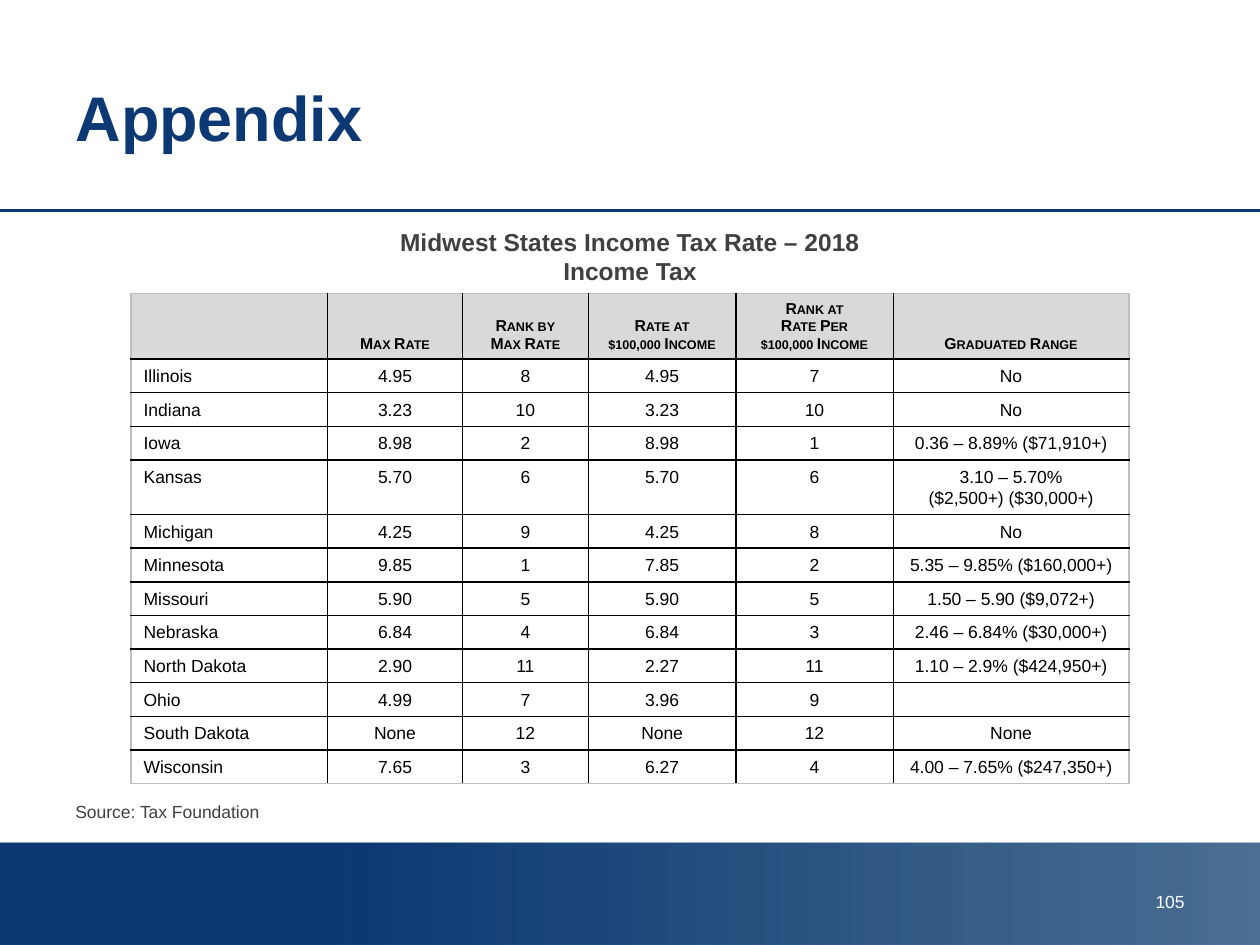
import pptx
import pptx.util
import pptx.dml.color
import pptx.enum.shapes
import pptx.enum.text
import pptx.oxml.ns
import lxml.etree

Inches, Pt = pptx.util.Inches, pptx.util.Pt
RGBColor = pptx.dml.color.RGBColor
Align = pptx.enum.text.PP_ALIGN
Anchor = pptx.enum.text.MSO_ANCHOR
qn = pptx.oxml.ns.qn

NAVY = RGBColor(0x0C, 0x38, 0x73)
TEAL = RGBColor(0x00, 0x33, 0x66)
DARK = RGBColor(0x40, 0x40, 0x40)
GREY = RGBColor(0xD9, 0xD9, 0xD9)
EDGE = RGBColor(0xBF, 0xBF, 0xBF)
BLACK = RGBColor(0, 0, 0)
WHITE = RGBColor(0xFF, 0xFF, 0xFF)

TITLE = "Appendix"
HEADING = "Midwest States Income Tax Rate – 2018\vIncome Tax"
SOURCE = "Source: Tax Foundation"
NUMBER = "105"
ROWS = [
    ("", "Max Rate", "Rank by\vMax Rate", "Rate at\v$100,000 Income",
     "Rank at\vRate Per\v$100,000 Income", "Graduated Range"),
    ("Illinois", "4.95", "8", "4.95", "7", "No"),
    ("Indiana", "3.23", "10", "3.23", "10", "No"),
    ("Iowa", "8.98", "2", "8.98", "1", "0.36 – 8.89% ($71,910+)"),
    ("Kansas", "5.70", "6", "5.70", "6", "3.10 – 5.70%\v($2,500+) ($30,000+)"),
    ("Michigan", "4.25", "9", "4.25", "8", "No"),
    ("Minnesota", "9.85", "1", "7.85", "2", "5.35 – 9.85% ($160,000+)"),
    ("Missouri", "5.90", "5", "5.90", "5", "1.50 – 5.90 ($9,072+)"),
    ("Nebraska", "6.84", "4", "6.84", "3", "2.46 – 6.84% ($30,000+)"),
    ("North Dakota", "2.90", "11", "2.27", "11", "1.10 – 2.9% ($424,950+)"),
    ("Ohio", "4.99", "7", "3.96", "9", ""),
    ("South Dakota", "None", "12", "None", "12", "None"),
    ("Wisconsin", "7.65", "3", "6.27", "4", "4.00 – 7.65% ($247,350+)"),
]
WIDTHS = [1.56, 1.07, 1, 1.17, 1.25, 1.87]
HEAD, LINE, PAD = 0.52, 12 / 72, 0.1


def style(frame, text, size, color, align=Align.LEFT, bold=False):
    frame.text = text
    for para in frame.paragraphs:
        para.alignment = align
        for run in para.runs:
            font = run.font
            font.name, font.size, font.bold = "Arial", Pt(size), bold
            font.color.rgb = color
        if not text:
            # An empty paragraph takes its height from its end mark.
            lxml.etree.SubElement(
                para._p, qn("a:endParaRPr"), sz=str(size * 100))


def label(slide, box, *args):
    frame = slide.shapes.add_textbox(*map(Inches, box)).text_frame
    frame.word_wrap = True
    style(frame, *args)


def border(cell, edges):
    """Draw the sides of a cell; edges maps each side to its colour."""
    props = cell._tc.get_or_add_tcPr()
    for spot, (side, color) in enumerate(edges.items()):
        line = lxml.etree.Element(qn("a:" + side), w=str(Pt(1)))
        fill = lxml.etree.SubElement(line, qn("a:solidFill"))
        lxml.etree.SubElement(fill, qn("a:srgbClr"), val=str(color))
        props.insert(spot, line)


def add_band(slide):
    band = slide.shapes.add_shape(
        pptx.enum.shapes.MSO_SHAPE.RECTANGLE,
        0, Inches(6.69), Inches(10), Inches(0.81))
    band.shadow.inherit = False
    band.line.fill.background()
    band.fill.gradient()
    band.fill.gradient_angle = 0
    looks = [(0.25, NAVY), (1, TEAL)]
    for stop, (place, color) in zip(band.fill.gradient_stops, looks):
        stop.position, stop.color.rgb = place, color
    last = band._element.spPr.findall(".//" + qn("a:srgbClr"))[-1]
    lxml.etree.SubElement(last, qn("a:alpha"), val="70000")


def add_rule(slide):
    rule = slide.shapes.add_connector(
        pptx.enum.shapes.MSO_CONNECTOR.STRAIGHT,
        0, Inches(1.67), Inches(10), Inches(1.67))
    rule.line.color.rgb, rule.line.width = NAVY, Pt(2)
    lxml.etree.SubElement(rule._element.spPr, qn("a:effectLst"))


def add_rates(slide):
    lines = [max(text.count("\v") for text in row) + 1 for row in ROWS]
    highs = [HEAD] + [PAD + LINE * count for count in lines[1:]]
    table = slide.shapes.add_table(
        len(ROWS), len(WIDTHS), Inches(1.04), Inches(2.33),
        Inches(sum(WIDTHS)), Inches(sum(highs))).table
    table.horz_banding = False
    for col, width in zip(table.columns, WIDTHS):
        col.width = Inches(width)
    for row, high in zip(table.rows, highs):
        row.height = Inches(high)
    for r, row in enumerate(ROWS):
        for c, text in enumerate(row):
            cell = table.cell(r, c)
            head = r == 0
            align = Align.CENTER if c else Align.LEFT
            style(cell.text_frame, text, 9 if head else 10, BLACK, align, head)
            para = cell.text_frame.paragraphs[0]
            if head:
                cell.vertical_anchor = Anchor.BOTTOM
                cell.margin_top = 0
                cell.fill.solid()
                cell.fill.fore_color.rgb = GREY
                for run in para.runs:
                    run.font._element.set("cap", "small")
            else:
                cell.fill.background()
                para.line_spacing = Pt(12)
            border(cell, {
                "lnL": BLACK if c else EDGE,
                "lnR": EDGE if c == len(WIDTHS) - 1 else BLACK,
                "lnT": EDGE if head else BLACK,
                "lnB": EDGE if r == len(ROWS) - 1 else BLACK})


def main():
    deck = pptx.Presentation()
    deck.slide_width, deck.slide_height = Inches(10), Inches(7.5)
    slide = deck.slides.add_slide(deck.slide_layouts[5])
    add_band(slide)
    add_rule(slide)
    title = slide.shapes.title
    title.left, title.top = Inches(0.5), Inches(0.3)
    title.width, title.height = Inches(9), Inches(1.25)
    title.text_frame.vertical_anchor = Anchor.MIDDLE
    style(title.text_frame, TITLE, 36, NAVY, Align.LEFT, True)
    label(slide, (7.17, 7.02, 2.33, 0.4), NUMBER, 10, WHITE, Align.RIGHT)
    label(slide, (0.5, 1.75, 9, 0.55), HEADING, 14, DARK, Align.CENTER, True)
    label(slide, (0.5, 6.31, 9, 0.27), SOURCE, 10, DARK)
    add_rates(slide)
    deck.save("out.pptx")


if __name__ == "__main__":
    main()
